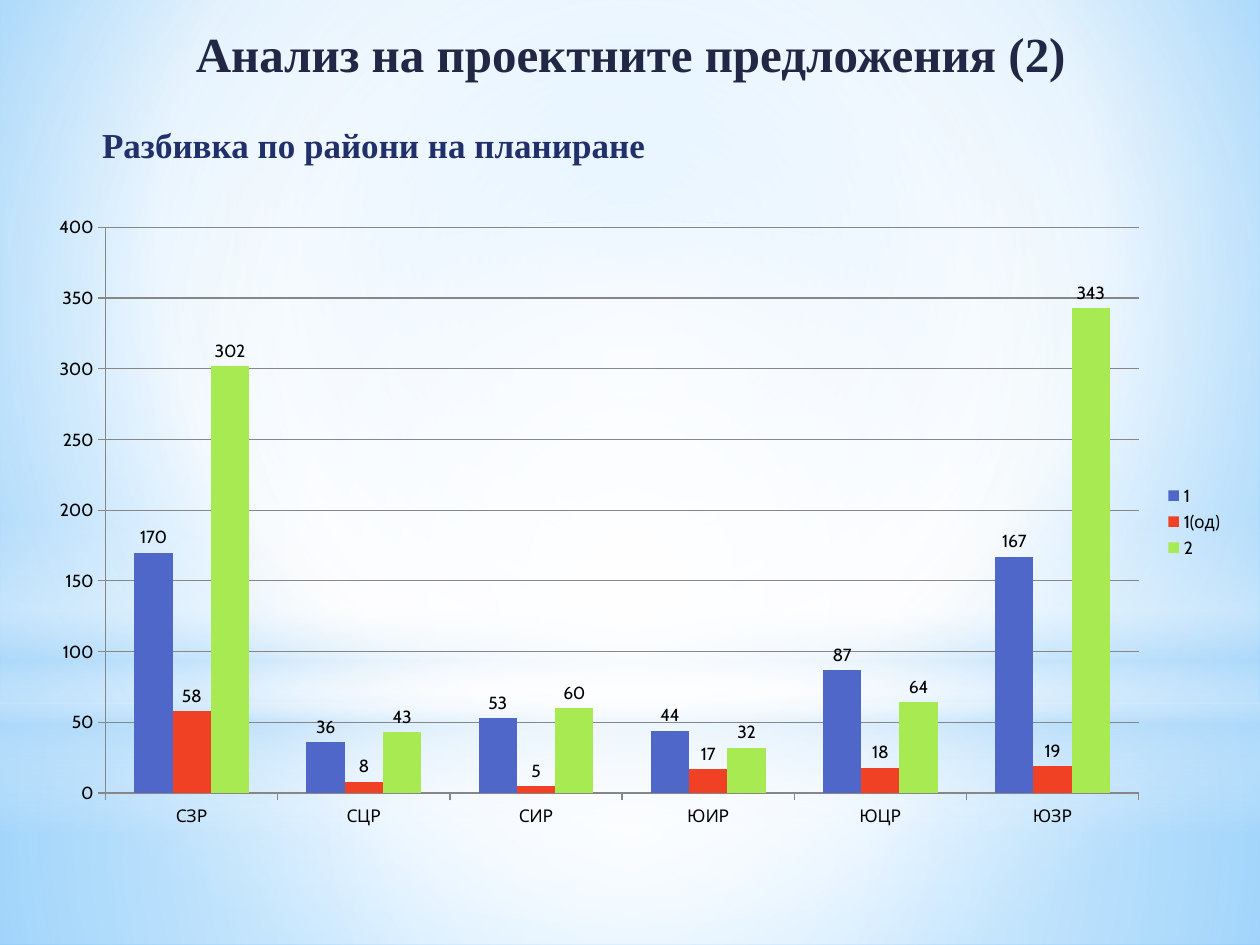
from dataclasses import dataclass

from lxml import etree
from pptx import Presentation
from pptx.chart.data import CategoryChartData
from pptx.dml.color import RGBColor
from pptx.enum.chart import XL_CHART_TYPE, XL_LABEL_POSITION, XL_LEGEND_POSITION, XL_TICK_MARK
from pptx.enum.shapes import MSO_SHAPE
from pptx.enum.text import MSO_ANCHOR, MSO_AUTO_SIZE, PP_ALIGN
from pptx.oxml.ns import qn
from pptx.util import Inches, Pt

CLUSTERED = XL_CHART_TYPE.COLUMN_CLUSTERED
OUTSIDE_END = XL_LABEL_POSITION.OUTSIDE_END
LEGEND_RIGHT = XL_LEGEND_POSITION.RIGHT
TICK_OUT, TICK_NONE = XL_TICK_MARK.OUTSIDE, XL_TICK_MARK.NONE
RECTANGLE, OVAL = MSO_SHAPE.RECTANGLE, MSO_SHAPE.OVAL
MIDDLE, TOP = MSO_ANCHOR.MIDDLE, MSO_ANCHOR.TOP
CENTER, JUSTIFY = PP_ALIGN.CENTER, PP_ALIGN.JUSTIFY


@dataclass(frozen=True)
class Theme:
    heading_font: str = "Times New Roman"
    chart_font: str = "Cabin"
    title_size: int = 28
    subtitle_size: int = 20
    chart_size: int = 10
    title: str = "212745"
    subtitle: str = "21306A"
    chart_text: str = "000000"
    axis: str = "878787"
    white: str = "FFFFFF"
    haze: str = "B4DCFA"
    sky: str = "9ED5FF"
    deep_sky: str = "5BB9FF"


THEME = Theme()


@dataclass(frozen=True)
class Stop:
    position: int  # percent
    color: str
    opacity: int = 100


@dataclass(frozen=True)
class Gradient:
    stops: tuple[Stop, ...]
    focus: tuple[int, int, int, int] | None = (50, 50, 50, 50)  # None means top to bottom


@dataclass(frozen=True)
class Glow:
    preset: MSO_SHAPE
    top: float
    height: float
    gradient: Gradient


@dataclass(frozen=True)
class Measure:
    name: str
    color: str
    projects: tuple[int, ...]


WHITE, HAZE = THEME.white, THEME.haze
BACKGROUND = Gradient(
    (Stop(0, THEME.sky), Stop(60, WHITE), Stop(100, THEME.deep_sky)), (20, 10, 20, 60))
GLOWS = (
    Glow(RECTANGLE, 5.58, 1.92, Gradient(
        (Stop(0, WHITE, 91), Stop(37, WHITE, 76), Stop(100, HAZE, 79)))),
    Glow(RECTANGLE, 0, 5.58, Gradient(
        (Stop(0, WHITE, 89), Stop(48, WHITE, 62), Stop(100, HAZE, 79)))),
    Glow(RECTANGLE, 4.12, 2.5, Gradient(
        (Stop(0, WHITE, 0), Stop(29, WHITE, 30), Stop(45, HAZE, 40),
         Stop(55, WHITE, 26), Stop(65, HAZE, 60), Stop(100, WHITE, 0)), None)),
    Glow(OVAL, 1.75, 5.58, Gradient((Stop(0, WHITE), Stop(56, WHITE, 0)))),
)
REGIONS = ("СЗР", "СЦР", "СИР", "ЮИР", "ЮЦР", "ЮЗР")
MEASURES = (
    Measure("1", "4E67C8", (170, 36, 53, 44, 87, 167)),
    Measure("1(од)", "F14124", (58, 8, 5, 17, 18, 19)),
    Measure("2", "A7EA52", (302, 43, 60, 32, 64, 343)),
)


def rgb(color: str) -> RGBColor:
    return RGBColor.from_string(color)


def apply_gradient(fill, properties, gradient: Gradient) -> None:
    """Put a gradient where the solid fill of these properties would be."""
    fill.solid()
    solid = properties.find(qn("a:solidFill"))
    grad = etree.Element(qn("a:gradFill"), rotWithShape="1")
    stop_list = etree.SubElement(grad, qn("a:gsLst"))
    for stop in gradient.stops:
        gs = etree.SubElement(stop_list, qn("a:gs"), pos=str(stop.position * 1000))
        color = etree.SubElement(gs, qn("a:srgbClr"), val=stop.color)
        if stop.opacity < 100:
            etree.SubElement(color, qn("a:alpha"), val=str(stop.opacity * 1000))
    if gradient.focus is None:
        etree.SubElement(grad, qn("a:lin"), ang="5400000", scaled="0")
    else:
        circle = etree.SubElement(grad, qn("a:path"), path="circle")
        sides = {side: str(inset * 1000) for side, inset in zip("ltrb", gradient.focus)}
        etree.SubElement(circle, qn("a:fillToRect"), **sides)
    properties.replace(solid, grad)


def add_glow(slide, glow: Glow) -> None:
    shape = slide.shapes.add_shape(
        glow.preset, 0, Inches(glow.top), Inches(10), Inches(glow.height))
    shape.shadow.inherit = False
    shape.line.fill.background()
    apply_gradient(shape.fill, shape._element.spPr, glow.gradient)


def write_heading(holder, text: str, box: tuple[float, ...], size: int, color: str,
                  align: PP_ALIGN, anchor: MSO_ANCHOR):
    """Place a placeholder, bring it to the front and return its paragraph."""
    holder.left, holder.top, holder.width, holder.height = map(Inches, box)
    holder._element.getparent().append(holder._element)
    frame = holder.text_frame
    frame.text = text
    frame.word_wrap = True
    frame.auto_size = MSO_AUTO_SIZE.NONE
    frame.vertical_anchor = anchor
    paragraph = frame.paragraphs[0]
    paragraph.alignment = align
    font = paragraph.font
    font.name, font.size, font.bold = THEME.heading_font, Pt(size), True
    font.color.rgb = rgb(color)
    return paragraph


def add_region_chart(slide) -> None:
    data = CategoryChartData()
    data.categories = REGIONS
    for measure in MEASURES:
        data.add_series(measure.name, measure.projects)
    chart = slide.shapes.add_chart(
        CLUSTERED, Inches(0.28), Inches(1.62), Inches(9.53), Inches(5.04), data).chart
    chart.has_title = False
    chart.font.name, chart.font.size = THEME.chart_font, Pt(THEME.chart_size)
    chart.font.color.rgb = rgb(THEME.chart_text)
    chart.has_legend = True
    chart.legend.position = LEGEND_RIGHT
    chart.legend.include_in_layout = False

    # Axes and gridlines
    chart.value_axis.has_major_gridlines = True
    for axis in (chart.category_axis, chart.value_axis):
        axis.major_tick_mark, axis.minor_tick_mark = TICK_OUT, TICK_NONE
    for line in (chart.category_axis.format.line, chart.value_axis.format.line,
                 chart.value_axis.major_gridlines.format.line):
        line.color.rgb = rgb(THEME.axis)
        line.width = Pt(0.75)

    # Columns and their values
    plot = chart.plots[0]
    plot.gap_width, plot.overlap, plot.vary_by_categories = 150, 0, False
    for series, measure in zip(plot.series, MEASURES):
        series.format.fill.solid()
        series.format.fill.fore_color.rgb = rgb(measure.color)
        series.invert_if_negative = False
        series.data_labels.show_value = True
        series.data_labels.position = OUTSIDE_END


def main() -> None:
    presentation = Presentation()
    presentation.slide_width, presentation.slide_height = Inches(10), Inches(7.5)
    slide = presentation.slides.add_slide(presentation.slide_layouts[1])

    # Backdrop
    background_fill = slide.background.fill
    background_fill.solid()
    apply_gradient(background_fill, next(slide._element.iter(qn("p:bgPr"))), BACKGROUND)
    for glow in GLOWS:
        add_glow(slide, glow)

    # Headings
    write_heading(slide.shapes.title, "Анализ на проектните предложения (2)",
                  (0.2, 0, 9.61, 0.84), THEME.title_size, THEME.title, CENTER, MIDDLE)
    body = slide.placeholders[1]
    subtitle = write_heading(body, "Разбивка по райони на планиране",
                             (0.51, 0.76, 8.98, 6.61), THEME.subtitle_size,
                             THEME.subtitle, JUSTIFY, TOP)
    body.text_frame.margin_right = 0
    subtitle.line_spacing = 1.5
    subtitle.space_before, subtitle.space_after = Pt(0), Pt(3)
    properties = subtitle._p.get_or_add_pPr()
    properties.set("marL", str(Inches(0.2)))
    properties.set("indent", "0")
    properties.insert_element_before(
        etree.Element(qn("a:buNone")), "a:tabLst", "a:defRPr", "a:extLst")

    add_region_chart(slide)
    presentation.save("out.pptx")


if __name__ == "__main__":
    main()
